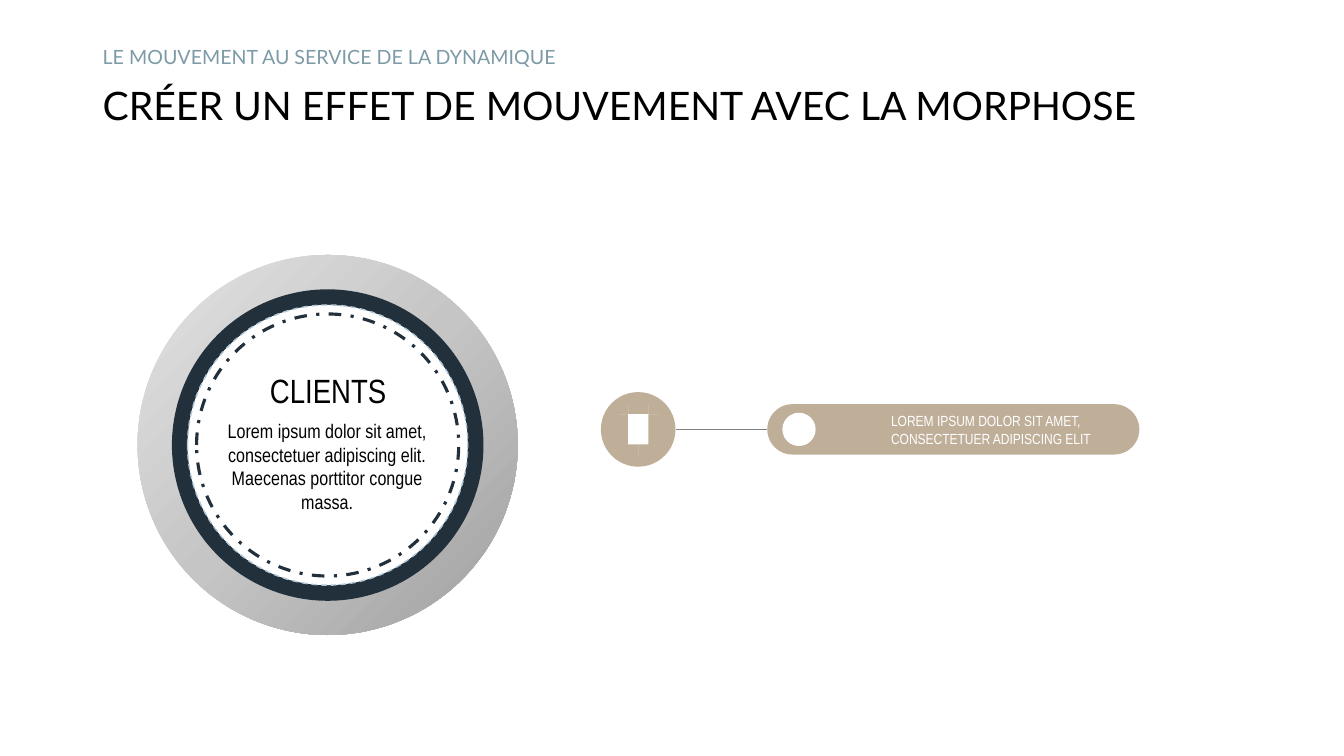
"""Build a slide on morph transitions: a client dial linked to an idea label."""
from math import cos, radians, sin

from lxml import etree
from pptx import Presentation, util as u
from pptx.dml.color import RGBColor
from pptx.enum import dml, shapes, text
from pptx.oxml.ns import qn

THEME = {
    "ink": "000000", "navy": "22303C", "mist": "7C9BA6", "pale": "B2C8D7",
    "sand": "BFAF99", "white": "FFFFFF", "grey": "808080",
    "rim": ((0, "A0A0A0"), (50000, "C5C5C5"), (100000, "E3E3E3")),
    "heading": "Lato", "body": "Arial Narrow",
    "title": 28, "name": 24, "copy": 14, "label": 10.5,
}

deck = Presentation()
deck.slide_width, deck.slide_height = u.Inches(13.33), u.Inches(7.5)
slide = deck.slides.add_slide(deck.slide_layouts[6])
cell = deck.slide_height / 75


def write(words, left, top, width, height, size, font="body", color="ink",
          align="LEFT", anchor="TOP", spacing=1.0):
    """Place wrapped text on the grid in the given format."""
    box = slide.shapes.add_textbox(*(round(n * cell) for n in (left, top, width, height)))
    frame = box.text_frame
    frame.word_wrap = True
    frame.vertical_anchor = text.MSO_ANCHOR[anchor]
    line = frame.paragraphs[0]
    line.alignment = text.PP_ALIGN[align]
    line.line_spacing = spacing
    run = line.add_run()
    run.text = words
    run.font.size = u.Pt(THEME[size])
    run.font.name = THEME[font]
    run.font.color.rgb = RGBColor.from_string(THEME[color])


def pill(center_x, center_y, width, height, color, kind="OVAL"):
    """Add a flat, unlined shape around a centre on the grid."""
    shape = slide.shapes.add_shape(
        shapes.MSO_SHAPE[kind], round((center_x - width / 2) * cell),
        round((center_y - height / 2) * cell), round(width * cell), round(height * cell))
    shape.shadow.inherit = False
    shape.fill.solid()
    shape.fill.fore_color.rgb = RGBColor.from_string(THEME[color])
    shape.line.fill.background()
    return shape


write("CRÉER UN EFFET DE MOUVEMENT AVEC LA MORPHOSE", 9.2, 7.8, 115, 5.7,
      "title", font="heading", anchor="MIDDLE", spacing=0.9)
write("LE MOUVEMENT AU SERVICE DE LA DYNAMIQUE", 9.2, 4, 115, 3.6,
      "copy", font="heading", color="mist", anchor="MIDDLE", spacing=0.9)

dial_x, dial_y = 32.5, 44.15
rim = pill(dial_x, dial_y, 37.7, 37.7, "grey")
rim.fill.gradient()
gradient = rim.fill._xPr.find(qn("a:gradFill"))
for part in list(gradient):
    gradient.remove(part)
stops = etree.SubElement(gradient, qn("a:gsLst"))
for position, tone in THEME["rim"]:
    stop = etree.SubElement(stops, qn("a:gs"), pos=str(position))
    etree.SubElement(stop, qn("a:srgbClr"), val=tone)
spread = etree.SubElement(gradient, qn("a:path"))
spread.set("path", "circle")
etree.SubElement(spread, qn("a:fillToRect"), l="100000", t="100000")

pill(dial_x, dial_y, 30.9, 30.9, "navy")
for diameter, color, weight, dash in ((27.8, "pale", 1, "DASH"),
                                      (26, "navy", 2.25, "DASH_DOT")):
    ring = pill(dial_x, dial_y, diameter, diameter, "white")
    ring.line.color.rgb = RGBColor.from_string(THEME[color])
    ring.line.width = u.Pt(weight)
    ring.line.dash_style = dml.MSO_LINE[dash]

write("CLIENTS", 13.7, 36.2, 37.7, 5, "name", align="CENTER")
write("Lorem ipsum dolor sit amet, consectetuer adipiscing elit. "
      "Maecenas porttitor congue massa.", 21.6, 41.1, 21.7, 10.4, "copy", align="CENTER")

idea_x, idea_y = 63.3, 42.6
pill(idea_x, idea_y, 7.4, 7.4, "sand")
label = pill(94.55, idea_y, 36.9, 5, "sand", kind="ROUNDED_RECTANGLE")
label.adjustments[0] = 0.5

link = slide.shapes.add_connector(
    shapes.MSO_CONNECTOR.STRAIGHT,
    *(round(n * cell) for n in (67, idea_y, 76.1, idea_y)))
link.line.color.rgb = RGBColor.from_string(THEME["grey"])
link.line.width = u.Pt(0.5)
etree.SubElement(link._element.spPr, qn("a:effectLst"))

write("LOREM IPSUM DOLOR SIT AMET, CONSECTETUER ADIPISCING ELIT",
      87.4, 40.35, 25.6, 4.5, "label", color="white", anchor="MIDDLE")
pill(79.25, idea_y, 3.3, 3.3, "white")

globe_y = 42.1
globe = [(1.4 * cos(radians(a)), 1.4 * sin(radians(a))) for a in range(-210, 31, 10)]
neck = [(1.1, 0.9), (0.8, 1.25), (0.7, 1.6), (0.5, 1.85)]
bulb = [globe + neck + [(-x, y) for x, y in reversed(neck)]]
ray = [(-0.15, -1.55), (-0.17, -2), (-0.1, -2.1), (0.1, -2.1), (0.17, -2), (0.15, -1.55)]
for tilt in range(-60, 61, 30):
    c, s = cos(radians(tilt)), sin(radians(tilt))
    bulb.append([(x * c - y * s, x * s + y * c) for x, y in ray])
for y in (2.05, 2.33):
    bulb.append([(-0.5, y - 0.1), (0.5, y - 0.1), (0.58, y),
                 (0.5, y + 0.1), (-0.5, y + 0.1), (-0.58, y)])
bulb.append([(0.42 * cos(radians(a)), 2.48 + 0.42 * sin(radians(a)))
             for a in range(0, 181, 15)])

start, *rest = bulb
outline = slide.shapes.build_freeform(*start[0], scale=cell)
outline.add_line_segments(start[1:], close=True)
for contour in rest:
    outline.move_to(*contour[0])
    outline.add_line_segments(contour[1:], close=True)
icon = outline.convert_to_shape(round(idea_x * cell), round(globe_y * cell))
icon.shadow.inherit = False
icon.fill.solid()
icon.fill.fore_color.rgb = RGBColor.from_string(THEME["white"])
icon.line.fill.background()

deck.save("out.pptx")
